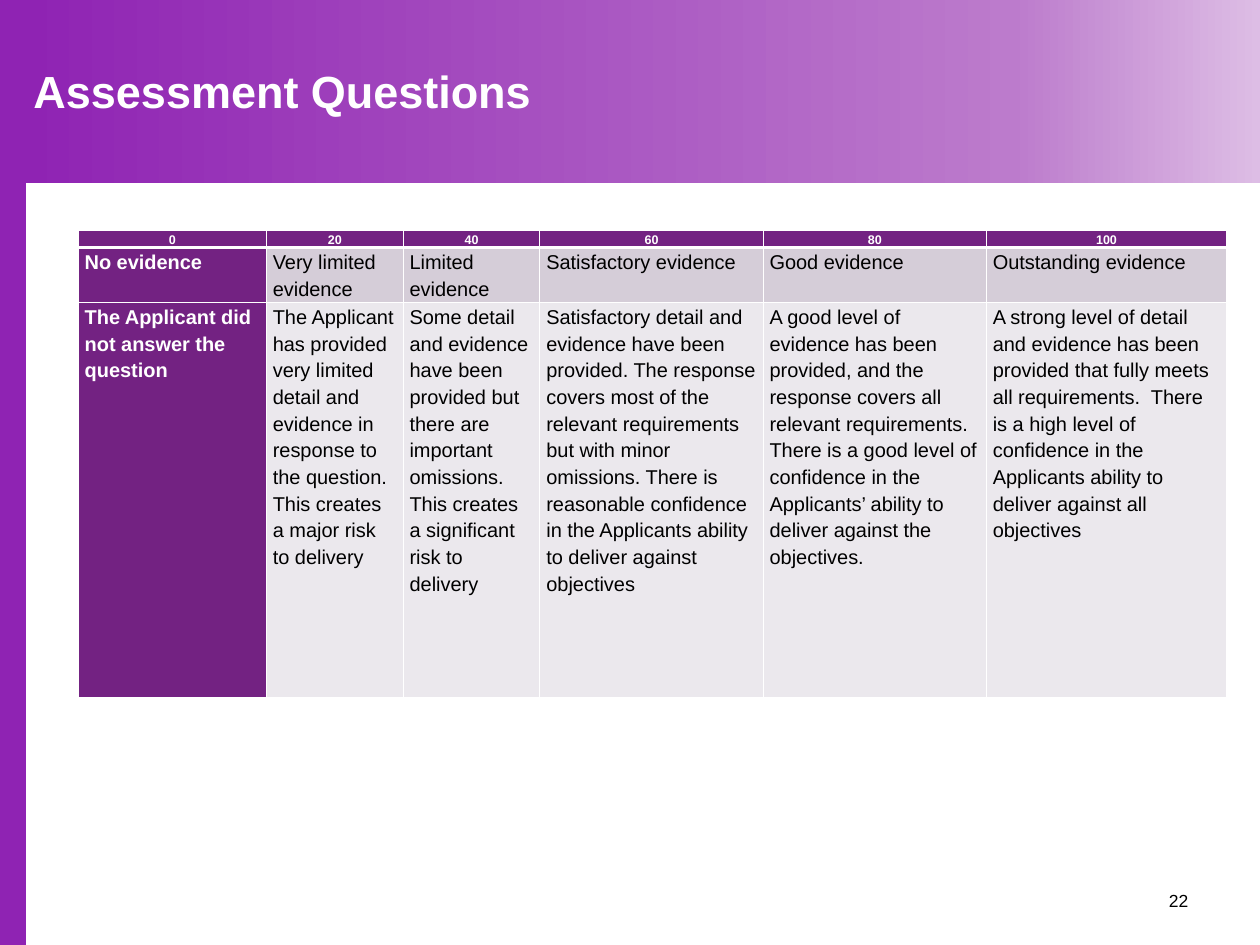
from copy import deepcopy

from lxml import etree
from pptx import Presentation
from pptx.dml.color import RGBColor
from pptx.enum.shapes import MSO_SHAPE
from pptx.enum.text import MSO_ANCHOR, MSO_AUTO_SIZE, PP_ALIGN
from pptx.oxml.ns import qn
from pptx.util import Cm, Pt

RECTANGLE = MSO_SHAPE.RECTANGLE
TOP, MIDDLE = MSO_ANCHOR.TOP, MSO_ANCHOR.MIDDLE
LEFT, CENTER, RIGHT = PP_ALIGN.LEFT, PP_ALIGN.CENTER, PP_ALIGN.RIGHT
NO_AUTOFIT = MSO_AUTO_SIZE.NONE
TITLE_ONLY = 5

FONT = "Arial"
COLORS = {
    "violet": "8F23B3",
    "orchid": "BC7BCC",
    "lilac": "DDBDE5",
    "header": "732282",
    "level": "D5CDD8",
    "description": "EBE8ED",
    "white": "FFFFFF",
    "black": "000000",
}
BAND_STOPS = [(0, "violet"), (0.8, "orchid"), (1, "lilac")]

COLUMN_WIDTHS = [5.31, 3.86, 3.86, 6.3, 6.3, 6.78]
ROW_HEIGHTS = [0.48, 1.55, 11.15]
ROW_FILLS = ["header", "level", "description"]
SCORING = [
    ["0", "20", "40", "60", "80", "100"],
    [
        "No evidence",
        "Very limited evidence",
        "Limited evidence",
        "Satisfactory evidence",
        "Good evidence",
        "Outstanding evidence",
    ],
    [
        "The Applicant did not answer the question",
        "The Applicant has provided very limited detail and evidence in response "
        "to the question. This creates a major risk to delivery",
        "Some detail and evidence have been provided but there are important "
        "omissions. This creates a significant risk to delivery",
        "Satisfactory detail and evidence have been provided. The response covers "
        "most of the relevant requirements but with minor omissions. There is "
        "reasonable confidence in the Applicants ability to deliver against objectives",
        "A good level of evidence has been provided, and the response covers all "
        "relevant requirements. There is a good level of confidence in the "
        "Applicants’ ability to deliver against the objectives.",
        "A strong level of detail and evidence has been provided that fully meets "
        "all requirements.  There is a high level of confidence in the Applicants "
        "ability to deliver against all objectives",
    ],
]


def rgb(name):
    return RGBColor.from_string(COLORS[name])


def write_text(text_frame, text, size, color, bold=False, align=LEFT):
    paragraph = text_frame.paragraphs[0]
    paragraph.alignment = align
    run = paragraph.add_run()
    run.text = text
    run.font.name = FONT
    run.font.size = Pt(size)
    run.font.bold = bold
    run.font.color.rgb = rgb(color)
    return paragraph


def add_rectangle(slide, left, top, width, height):
    shape = slide.shapes.add_shape(
        RECTANGLE, Cm(left), Cm(top), Cm(width), Cm(height))
    shape.shadow.inherit = False
    return shape


def add_side_bar(slide):
    bar = add_rectangle(slide, 0, 0, 0.7, 26.67)
    bar.fill.solid()
    bar.fill.fore_color.rgb = rgb("violet")
    bar.line.color.rgb = rgb("violet")
    bar.line.width = Pt(2)


def add_title_band(slide):
    band = add_rectangle(slide, 0.69, 0, 34.87, 5.18)
    band.line.fill.background()
    band.fill.gradient()
    band.fill.gradient_angle = 0
    first_stop = band.element.spPr.find(".//" + qn("a:gs"))
    first_stop.addnext(deepcopy(first_stop))
    for stop, (position, color) in zip(band.fill.gradient_stops, BAND_STOPS):
        stop.position = position
        stop.color.rgb = rgb(color)


def place_title(slide, text):
    """Format the title placeholder and bring it in front of the band."""
    title = slide.shapes.title
    title.left, title.top, title.width, title.height = (
        Cm(0.69), Cm(0), Cm(34.87), Cm(3.81))
    text_frame = title.text_frame
    text_frame.auto_size = NO_AUTOFIT
    text_frame.vertical_anchor = TOP
    text_frame.margin_top = Cm(1.78)
    write_text(text_frame, text, 36, "white", bold=True)
    title.element.getparent().append(title.element)


def add_page_number(slide, text):
    box = slide.shapes.add_textbox(Cm(25.48), Cm(24.71), Cm(8.31), Cm(1.42))
    box.text_frame.word_wrap = True
    box.text_frame.vertical_anchor = MIDDLE
    write_text(box.text_frame, text, 14, "black", align=RIGHT)


def set_borders(cell, widths):
    """Draw white borders; widths are points by side tag, set before the fill."""
    properties = cell._tc.get_or_add_tcPr()
    for side, width in widths.items():
        line = etree.SubElement(properties, qn(f"a:{side}"), w=str(Pt(width)))
        fill = etree.SubElement(line, qn("a:solidFill"))
        etree.SubElement(fill, qn("a:srgbClr"), val=COLORS["white"])


def format_cell(cell, text, row, column):
    is_score = row == 0
    is_header = is_score or column == 0
    set_borders(cell, {
        "lnL": 1,
        "lnR": 1,
        "lnT": 3 if row == 1 else 1,
        "lnB": 3 if is_score else 1,
    })
    cell.fill.solid()
    cell.fill.fore_color.rgb = rgb("header" if is_header else ROW_FILLS[row])
    cell.margin_left = cell.margin_right = Cm(0.18)
    cell.margin_top = cell.margin_bottom = 0
    cell.vertical_anchor = MIDDLE if is_score else TOP
    paragraph = write_text(
        cell.text_frame, text,
        size=10 if is_score else 16,
        color="white" if is_header else "black",
        bold=is_header,
        align=CENTER if is_score else LEFT,
    )
    paragraph.line_spacing = 1.2


def add_scoring_table(slide):
    table = slide.shapes.add_table(
        len(ROW_HEIGHTS), len(COLUMN_WIDTHS), Cm(2.21), Cm(6.5),
        Cm(sum(COLUMN_WIDTHS)), Cm(sum(ROW_HEIGHTS))).table
    for column, width in zip(table.columns, COLUMN_WIDTHS):
        column.width = Cm(width)
    for row, height in zip(table.rows, ROW_HEIGHTS):
        row.height = Cm(height)
    for row, texts in enumerate(SCORING):
        for column, text in enumerate(texts):
            format_cell(table.cell(row, column), text, row, column)


def main():
    presentation = Presentation()
    presentation.slide_width = Cm(35.56)
    presentation.slide_height = Cm(26.67)
    slide = presentation.slides.add_slide(presentation.slide_layouts[TITLE_ONLY])
    add_side_bar(slide)
    add_title_band(slide)
    add_page_number(slide, "22")
    place_title(slide, "Assessment Questions")
    add_scoring_table(slide)
    presentation.save("out.pptx")


if __name__ == "__main__":
    main()
